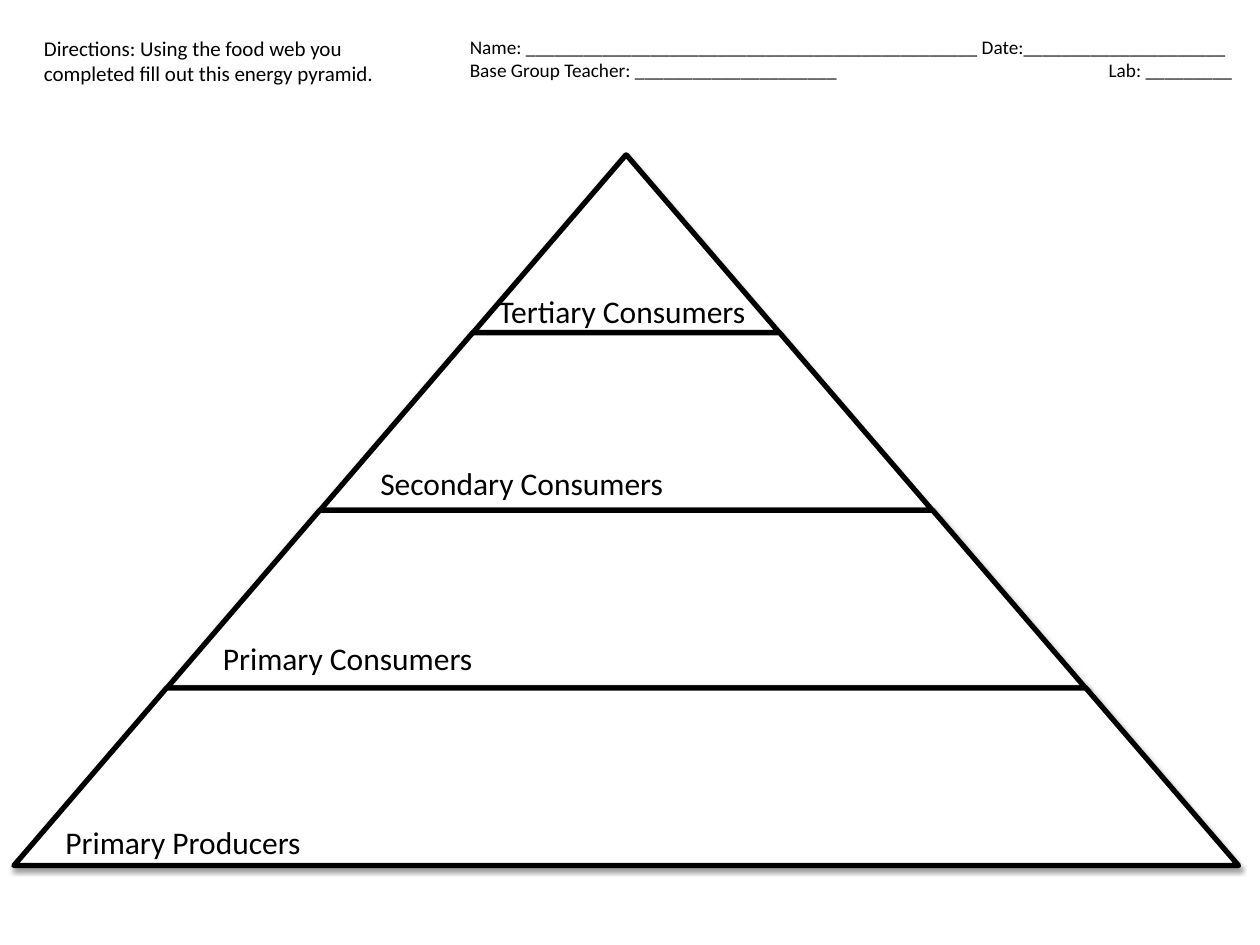
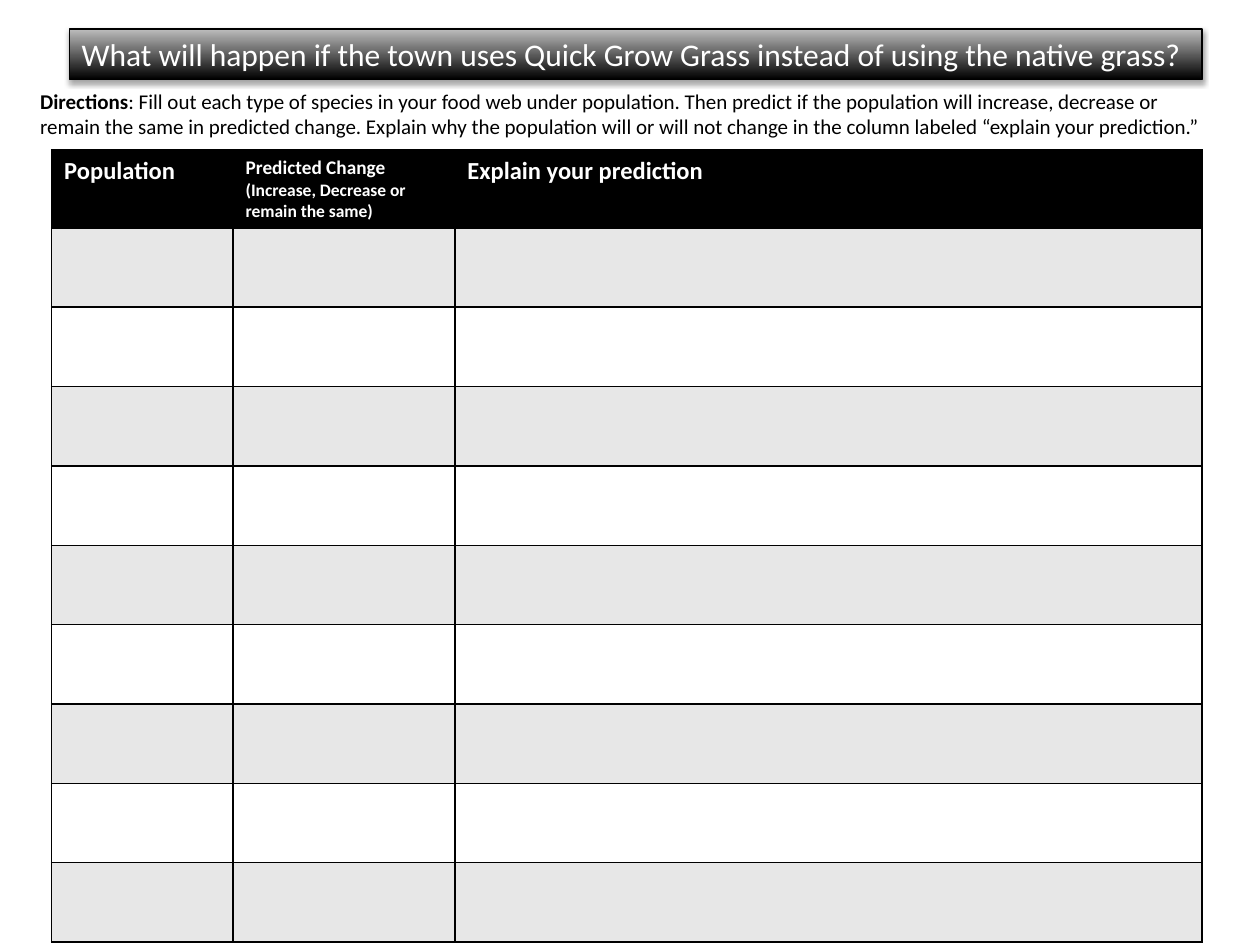
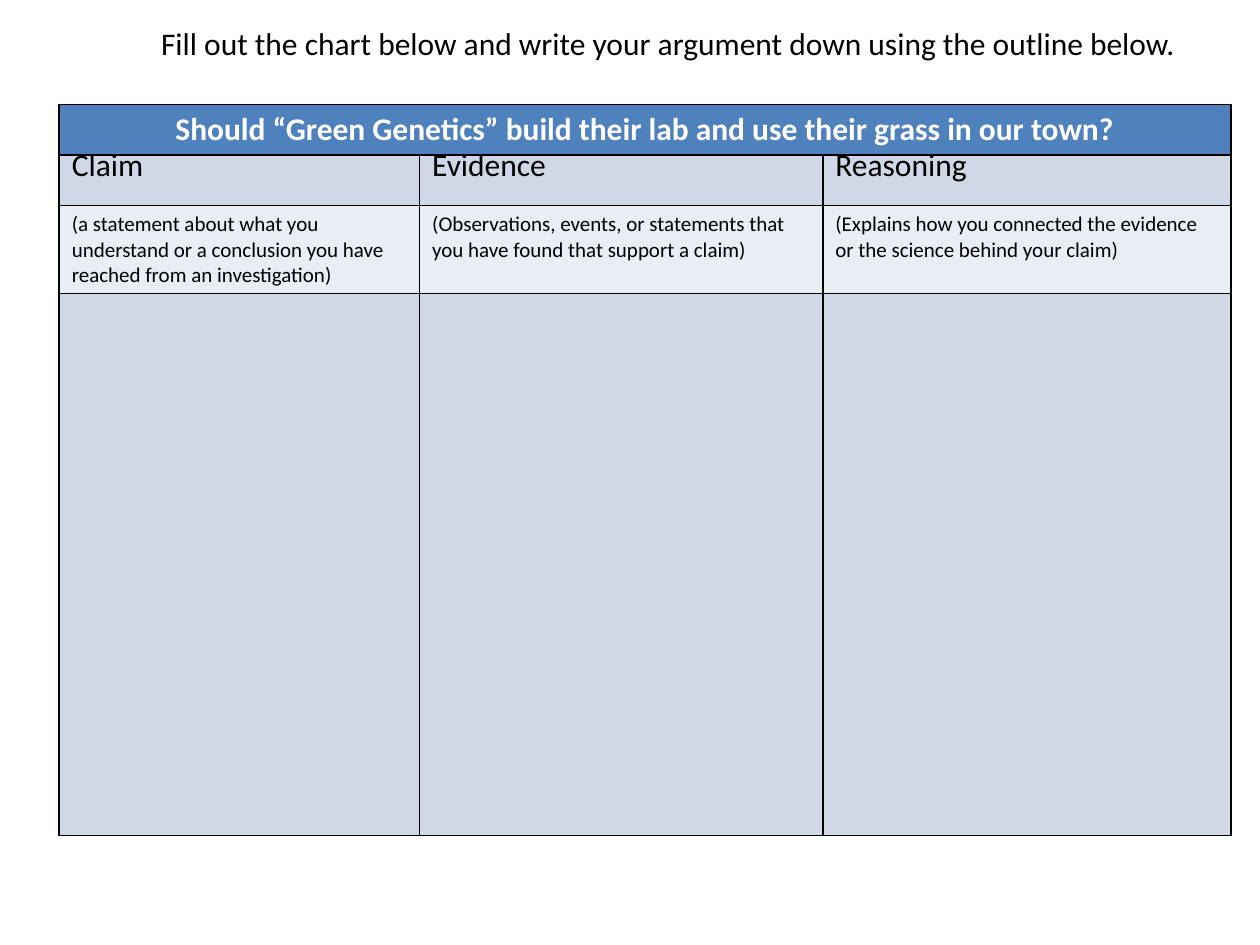
from lxml import etree
from pptx import Presentation
from pptx import util as u
from pptx.dml.color import RGBColor
from pptx.enum import shapes, text
from pptx.oxml import parse_xml
from pptx.oxml.ns import nsdecls, qn

BLACK, WHITE = "000000", "FFFFFF"
SILVER, PALE_GREY = "BDBDBD", "E7E7E7"
BLUE, LIGHT_BLUE, PALE_BLUE = "4F81BD", "D0D8E8", "E9EDF4"


def color(hex_code):
    return RGBColor.from_string(hex_code)


class Worksheet:
    """Holds the style and the slide being filled."""

    font = "Calibri"

    def __init__(self):
        self.deck = Presentation()
        self.deck.slide_width, self.deck.slide_height = u.Inches(10), u.Inches(7.5)
        self.slide = None

    def new_slide(self):
        self.slide = self.deck.slides.add_slide(self.deck.slide_layouts[6])

    def style(self, font, size, ink=BLACK, bold=False):
        font.name, font.size, font.bold = self.font, u.Pt(size), bold
        font.color.rgb = color(ink)

    def set_lines(self, frame, lines, ink=BLACK, bold=False, align=None, spacing=None):
        """Fill a frame with (text, size) lines."""
        for i, (words, size) in enumerate(lines):
            paragraph = frame.add_paragraph() if i else frame.paragraphs[0]
            paragraph.text = words
            paragraph.alignment = align
            paragraph.line_spacing = spacing
            self.style(paragraph.font, size, ink, bold)

    def label(self, box, lines, wrap=True):
        frame = self.slide.shapes.add_textbox(*map(u.Inches, box)).text_frame
        frame.word_wrap = wrap
        frame.auto_size = text.MSO_AUTO_SIZE.SHAPE_TO_FIT_TEXT
        self.set_lines(frame, lines)
        return frame

    def tab_stop(self, paragraph, position):
        stops = parse_xml(f'<a:tabLst {nsdecls("a")}><a:tab pos="{u.Inches(position)}" algn="l"/></a:tabLst>')
        paragraph._p.get_or_add_pPr().insert(0, stops)

    def shape(self, parent, kind, box, line_width, shadow_alpha):
        """Add a black-outlined shape with a soft shadow below it."""
        shape = parent.add_shape(kind, *map(u.Inches, box))
        shape.line.color.rgb = color(BLACK)
        shape.line.width = u.Pt(line_width)
        shape.shadow.inherit = False
        shape._element.spPr.find(qn("a:effectLst")).append(parse_xml(
            f'<a:outerShdw {nsdecls("a")} blurRad="{u.Pt(3.1)}" dist="{u.Pt(1.7)}" dir="5400000" rotWithShape="0">'
            f'<a:srgbClr val="{BLACK}"><a:alpha val="{shadow_alpha * 1000}"/></a:srgbClr></a:outerShdw>'))
        return shape

    def banner(self, box, words):
        bar = self.shape(self.slide.shapes, shapes.MSO_SHAPE.RECTANGLE, box, 0.75, 35)
        bar.fill.gradient()
        bar.fill.gradient_angle = 90
        for stop, position, shade in zip(bar.fill.gradient_stops, (0, 1), (BLACK, SILVER)):
            stop.position, stop.color.rgb = position, color(shade)
        bar.text_frame.word_wrap = True
        self.set_lines(bar.text_frame, [(words, 18)], WHITE, align=text.PP_ALIGN.LEFT)

    def table(self, left, top, columns, rows, fills):
        """Add a bordered grid with one fill per row."""
        grid = self.slide.shapes.add_table(
            len(rows), len(columns), u.Inches(left), u.Inches(top),
            u.Inches(sum(columns)), u.Inches(sum(rows))).table
        for column, width in zip(grid.columns, columns):
            column.width = u.Inches(width)
        for row, height, fill in zip(grid.rows, rows, fills):
            row.height = u.Inches(height)
            for cell in row.cells:
                cell.fill.solid()
                cell.fill.fore_color.rgb = color(fill)
                self.borders(cell)
        return grid

    def borders(self, cell):
        properties = cell._tc.get_or_add_tcPr()
        for i, side in enumerate(("lnL", "lnR", "lnT", "lnB")):
            edge = etree.Element(qn(f"a:{side}"), w=str(u.Pt(1)))
            ink = etree.SubElement(edge, qn("a:solidFill"))
            etree.SubElement(ink, qn("a:srgbClr"), val=BLACK)
            properties.insert(i, edge)


def energy_pyramid(sheet):
    sheet.new_slide()

    # Pyramid tiers, each one wider than the tier above by the same step
    center, top, tier_height, step = 4.97, 1.23, 1.41, 2.43
    pyramid = sheet.slide.shapes.add_group_shape().shapes
    for i in range(4):
        width = step * (i + 1)
        box = (center - width / 2, top + tier_height * i, width, tier_height)
        tier = sheet.shape(pyramid, shapes.MSO_SHAPE.TRAPEZOID, box, 3, 38)
        tier.adjustments[0] = 0.86
        tier.fill.solid()
        tier.fill.fore_color.rgb = color(WHITE)

    # Trophic levels
    for level, left, level_top, width in (
            ("Primary Producers", 0.42, 6.48, 3.75),
            ("Primary Consumers", 1.67, 5.02, 3.75),
            ("Secondary Consumers", 2.92, 3.63, 2.5),
            ("Tertiary Consumers", 3.86, 2.27, 2.5)):
        sheet.label((left, level_top, width, 0.4), [(level, 18)])

    # Student details and directions
    details = sheet.label((3.63, 0.23, 6.32, 0.47), [
        ("Name: " + "_" * 47 + " Date:" + "_" * 21, 11),
        ("Base Group Teacher: " + "_" * 21 + "\tLab: " + "_" * 9, 11)], wrap=False)
    sheet.tab_stop(details.paragraphs[1], 5.07)
    sheet.label((0.25, 0.23, 2.99, 0.5), [
        ("Directions: Using the food web you completed fill out this energy pyramid.", 12)])


def population_predictions(sheet):
    sheet.new_slide()

    # Prediction table
    species_rows = 9
    bands = [WHITE if i % 2 else PALE_GREY for i in range(species_rows)]
    predictions = sheet.table(0.41, 1.19, (1.44, 1.76, 5.93),
                              [0.61] + [0.63] * species_rows, [BLACK] + bands)
    headings = ([("Population", 14)],
                [("Predicted Change", 11), ("(Increase, Decrease or remain the same)", 10)],
                [("Explain your prediction", 14)])
    for cell, heading in zip(predictions.rows[0].cells, headings):
        sheet.set_lines(cell.text_frame, heading, WHITE, bold=True)

    # Directions with a bold lead word
    directions = sheet.label((0.22, 0.65, 9.45, 0.5), [("", 12)]).paragraphs[0]
    for words, bold in (
            ("Directions", True),
            (": Fill out each type of species in your food web under population. Then predict if the "
             "population will increase, decrease or remain the same in predicted change. Explain why the "
             "population will or will not change in the column labeled “explain your prediction.”", False)):
        run = directions.add_run()
        run.text = words
        sheet.style(run.font, 12, bold=bold)

    sheet.banner((0.55, 0.23, 8.99, 0.4),
                 "What will happen if the town uses Quick Grow Grass instead of using the native grass?")


def argument_outline(sheet):
    sheet.new_slide()

    # Claim, evidence and reasoning table
    outline = sheet.table(0.47, 0.83, (2.86, 3.2, 3.24), (0.4, 0.4, 0.7, 4.3),
                          (BLUE, LIGHT_BLUE, PALE_BLUE, LIGHT_BLUE))
    question = outline.cell(0, 0)
    question.merge(outline.cell(0, 2))
    sheet.set_lines(question.text_frame,
                    [("Should “Green Genetics” build their lab and use their grass in our town?", 18)],
                    WHITE, bold=True, align=text.PP_ALIGN.CENTER)
    parts = (
        ("Claim", "(a statement about what you understand or a conclusion you have reached from an investigation)"),
        ("Evidence", "(Observations, events, or statements that you have found that support a claim)"),
        ("Reasoning", "(Explains how you connected the evidence or the science behind your claim)"))
    for i, (part, meaning) in enumerate(parts):
        sheet.set_lines(outline.cell(1, i).text_frame, [(part, 18)], spacing=0.5)
        sheet.set_lines(outline.cell(2, i).text_frame, [(meaning, 12)])

    sheet.label((1.18, 0.14, 8.3, 0.4), [
        ("Fill out the chart below and write your argument down using the outline below.", 18)], wrap=False)


def main():
    sheet = Worksheet()
    energy_pyramid(sheet)
    population_predictions(sheet)
    argument_outline(sheet)
    sheet.deck.save("out.pptx")


if __name__ == "__main__":
    main()
